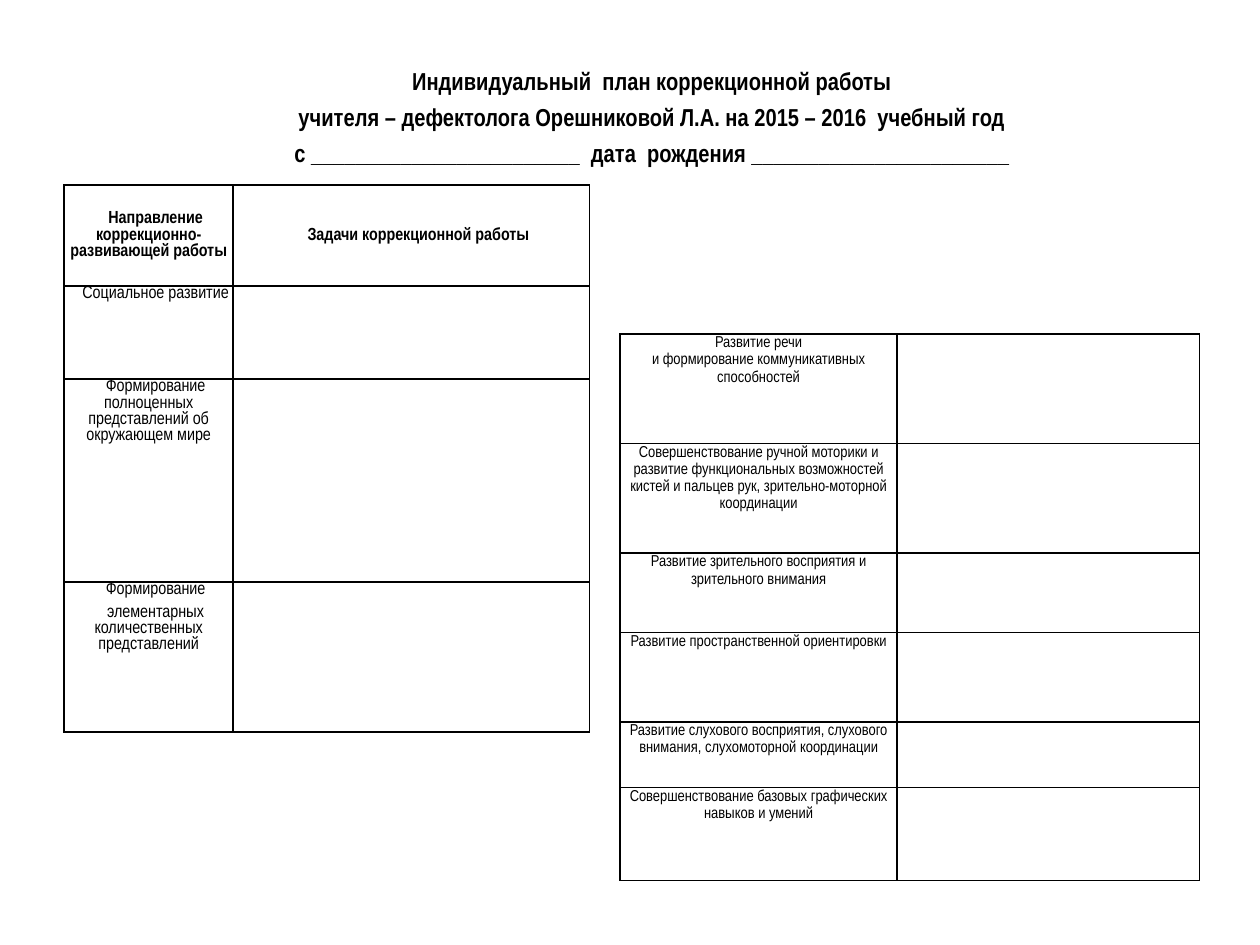
import dataclasses

import pptx
import pptx.dml.color
import pptx.enum.text
import pptx.oxml
import pptx.oxml.ns
import pptx.util

Inches = pptx.util.Inches
Pt = pptx.util.Pt
Anchor = pptx.enum.text.MSO_ANCHOR
CENTER = pptx.enum.text.PP_ALIGN.CENTER


@dataclasses.dataclass(frozen=True)
class Theme:
    font: str = "Arial Narrow"
    ink: str = "000000"
    title_size: float = 14
    goals_size: float = 10
    skills_size: float = 9
    border_width: float = 1
    first_line_indent: float = 0.11
    paragraph_gap: float = 3.8


THEME = Theme()

TITLE_LINES = [
    "Индивидуальный  план коррекционной работы",
    "учителя – дефектолога Орешниковой Л.А. на 2015 – 2016  учебный год",
    "с ________________________  дата  рождения _______________________",
]

# Each row: height, then the cells, each a list of paragraphs
GOAL_ROWS = [
    (0.8, [["Направление коррекционно-развивающей работы"],
           ["Задачи коррекционной работы"]]),
    (0.74, [["Социальное развитие"]]),
    (1.61, [["Формирование полноценных представлений об окружающем мире"]]),
    (1.19, [["Формирование", "элементарных количественных представлений"]]),
]
SKILL_ROWS = [
    (0.87, [["Развитие речи", "и формирование коммуникативных способностей"]]),
    (0.87, [["Совершенствование ручной моторики и развитие функциональных "
             "возможностей кистей и пальцев рук, зрительно-моторной координации"]]),
    (0.63, [["Развитие зрительного восприятия и зрительного внимания"]]),
    (0.71, [["Развитие пространственной ориентировки"]]),
    (0.52, [["Развитие слухового восприятия, слухового внимания, "
             "слухомоторной координации"]]),
    (0.74, [["Совершенствование базовых графических навыков и умений"]]),
]


def set_attributes(target, values):
    for name, value in values.items():
        setattr(target, name, value)


def write_paragraphs(text_frame, lines, size, bold=False, indent=0, gap=0, spacing=1.0):
    """Fill a text frame with centred paragraphs."""
    text_frame.text = "\n".join(lines)
    for index, paragraph in enumerate(text_frame.paragraphs):
        set_attributes(paragraph, {
            "alignment": CENTER,
            "line_spacing": spacing,
            "space_before": Pt(gap if index else 0),
        })
        properties = paragraph._p.get_or_add_pPr()
        properties.set("marL", "0")
        properties.set("indent", str(Inches(indent)))
        for run in paragraph.runs:
            set_attributes(run.font, {"name": THEME.font, "size": Pt(size), "bold": bold})
            run.font.color.rgb = pptx.dml.color.RGBColor.from_string(THEME.ink)


def add_borders(cell):
    """Draw a solid line on all four sides of a cell."""
    properties = cell._tc.get_or_add_tcPr()
    for side in ("lnL", "lnR", "lnT", "lnB"):
        properties.append(pptx.oxml.parse_xml(
            f'<a:{side} {pptx.oxml.ns.nsdecls("a")} w="{Pt(THEME.border_width)}">'
            f'<a:solidFill><a:srgbClr val="{THEME.ink}"/></a:solidFill></a:{side}>'))


def add_title(slide, box):
    title = slide.shapes.title
    set_attributes(title, dict(zip(("left", "top", "width", "height"), map(Inches, box))))
    set_attributes(title.text_frame, {
        "word_wrap": True,
        "vertical_anchor": Anchor.MIDDLE,
        "auto_size": pptx.enum.text.MSO_AUTO_SIZE.NONE,
    })
    write_paragraphs(title.text_frame, TITLE_LINES, THEME.title_size, bold=True,
                     indent=THEME.first_line_indent, gap=THEME.paragraph_gap)


def add_plan_table(slide, position, column_widths, rows, side_margin, has_header, text_format):
    """Add a ruled table; cells without text stay open for handwriting."""
    left, top = position
    heights = [height for height, _ in rows]
    box = map(Inches, (left, top, sum(column_widths), sum(heights)))
    table = slide.shapes.add_table(len(rows), len(column_widths), *box).table
    set_attributes(table, {"first_row": False, "horz_banding": False})
    for column, width in zip(table.columns, column_widths):
        column.width = Inches(width)

    for row_index, (height, texts) in enumerate(rows):
        table.rows[row_index].height = Inches(height)
        is_header = has_header and row_index == 0
        for column_index in range(len(column_widths)):
            cell = table.cell(row_index, column_index)
            set_attributes(cell, {
                "margin_left": Inches(side_margin),
                "margin_right": Inches(side_margin),
                "margin_top": 0,
                "margin_bottom": 0,
                "vertical_anchor": Anchor.MIDDLE if is_header else Anchor.TOP,
            })
            add_borders(cell)
            cell.fill.background()
            if column_index < len(texts):
                write_paragraphs(cell.text_frame, texts[column_index],
                                 bold=is_header, **text_format)


def main():
    presentation = pptx.Presentation()
    set_attributes(presentation, {"slide_width": Inches(10), "slide_height": Inches(7.5)})
    slide = presentation.slides.add_slide(presentation.slide_layouts[5])

    # Left: directions and goals of the work
    add_plan_table(slide, (0.51, 1.47), (1.34, 2.83), GOAL_ROWS, 0.03, True, {
        "size": THEME.goals_size,
        "indent": THEME.first_line_indent,
        "gap": THEME.paragraph_gap,
    })
    # Heading
    add_title(slide, (0.83, 0.52, 8.58, 0.81))
    # Right: skills to develop
    add_plan_table(slide, (4.92, 2.65), (2.2, 2.4), SKILL_ROWS, 0.02, False, {
        "size": THEME.skills_size,
        "spacing": 1.15,
    })
    presentation.save("out.pptx")


if __name__ == "__main__":
    main()
